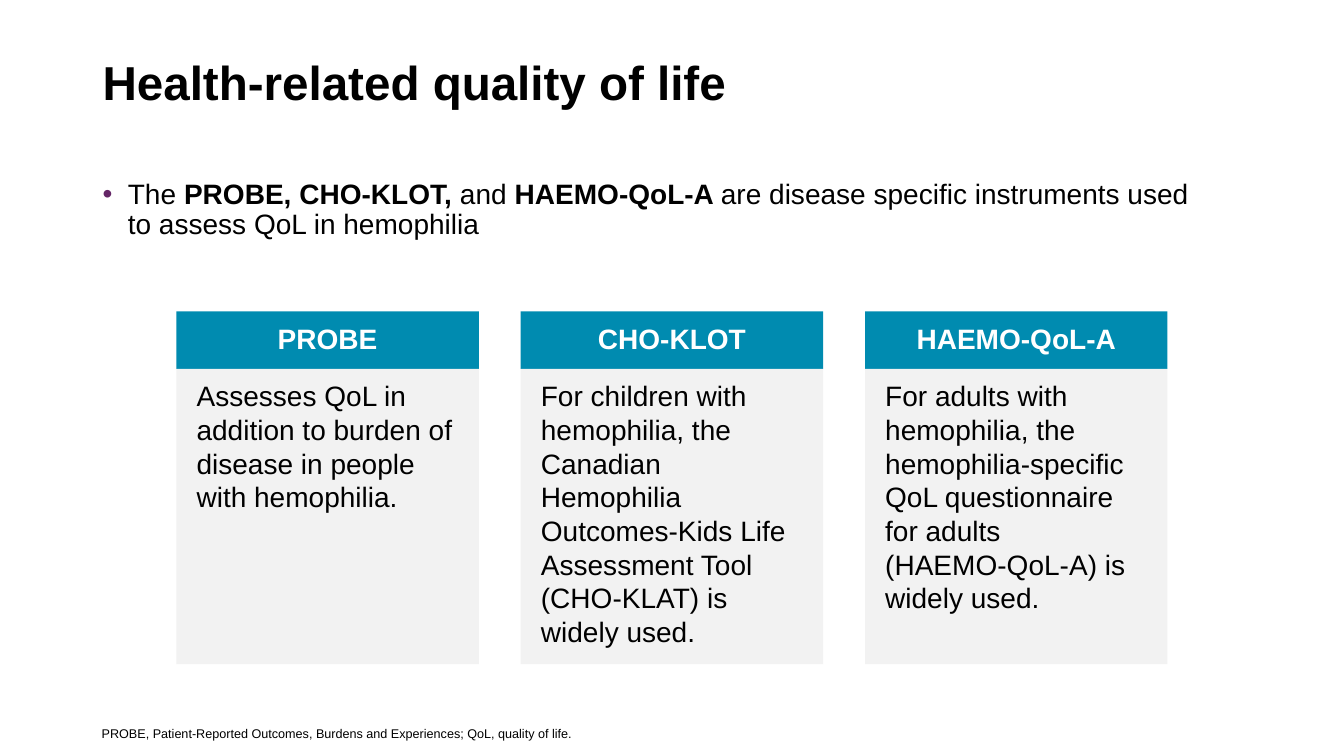
"""Build a slide on quality of life instruments in hemophilia."""
from lxml import etree
from pptx import Presentation
from pptx.dml.color import RGBColor
from pptx.enum.shapes import MSO_SHAPE as Shape
from pptx.enum.text import MSO_ANCHOR as Anchor, PP_ALIGN as Align
from pptx.oxml.ns import qn
from pptx.util import Inches, Pt

TITLE = "Health-related quality of life"
INTRO = [
    ("The ", False),
    ("PROBE, CHO-KLOT,", True),
    (" and ", False),
    ("HAEMO-QoL-A ", True),
    ("are disease specific instruments used to assess QoL in hemophilia", False),
]
CARDS = [
    ("PROBE", ["Assesses QoL in addition to burden of disease in people with hemophilia."]),
    ("CHO-KLOT", ["For children with hemophilia, the Canadian Hemophilia",
                  "Outcomes-Kids Life Assessment Tool (CHO-KLAT) is widely used."]),
    ("HAEMO-QoL-A", ["For adults with hemophilia, the hemophilia-specific QoL questionnaire for adults",
                     "(HAEMO-QoL-A) is widely used."]),
]
NOTE = "PROBE, Patient-Reported Outcomes, Burdens and Experiences; QoL, quality of life."

BLACK, WHITE, TEAL, GRAY, PLUM = "000000", "FFFFFF", "008BB0", "F2F2F2", "642566"
LEFT, TOP, WIDTH, GAP = 1.75, 3.09, 3, 0.415
HEAD, BODY = 0.57, 2.93


def color(code):
    return RGBColor.from_string(code)


def style(item, size, code=BLACK, bold=False):
    for run in item.runs:
        run.font.name = "Arial"
        run.font.size = Pt(size)
        run.font.bold = bold
        run.font.color.rgb = color(code)


def add_text(slide, box, lines, size, bold=False):
    frame = slide.shapes.add_textbox(*map(Inches, box)).text_frame
    frame.word_wrap = True
    frame.text = "\n".join(lines)
    for item in frame.paragraphs:
        style(item, size, bold=bold)
    return frame


def add_panel(slide, box, fill, lines, insets, align, code=BLACK, bold=False):
    panel = slide.shapes.add_shape(Shape.RECTANGLE, *map(Inches, box))
    panel.shadow.inherit = False
    panel.fill.solid()
    panel.fill.fore_color.rgb = color(fill)
    panel.line.fill.background()
    frame = panel.text_frame
    frame.word_wrap = True
    frame.vertical_anchor = Anchor.TOP
    (frame.margin_left, frame.margin_top,
     frame.margin_right, frame.margin_bottom) = map(Inches, insets)
    frame.text = "\n".join(lines)
    for item in frame.paragraphs:
        item.alignment = align
        style(item, 20, code, bold)
    return frame


def add_bullet(item, code):
    props = item._p.get_or_add_pPr()
    props.set("marL", str(Inches(0.25)))
    props.set("indent", str(Inches(-0.25)))
    tint = etree.SubElement(props, qn("a:buClr"))
    etree.SubElement(tint, qn("a:srgbClr"), val=code)
    etree.SubElement(props, qn("a:buFont"), typeface="Arial")
    etree.SubElement(props, qn("a:buChar"), char="•")


def main():
    deck = Presentation()
    deck.slide_width, deck.slide_height = Inches(13.33), Inches(7.5)
    slide = deck.slides.add_slide(deck.slide_layouts[6])

    title = add_text(slide, (0.92, 0.25, 11.5, 1.19), [TITLE], 34, True)
    title.vertical_anchor = Anchor.MIDDLE
    title.paragraphs[0].line_spacing = 0.9

    intro = add_text(slide, (0.92, 1.74, 11.23, 1), [], 20).paragraphs[0]
    add_bullet(intro, PLUM)
    intro.line_spacing = 0.9
    for words, bold in INTRO:
        intro.add_run().text = words
    style(intro, 20)
    for run, (words, bold) in zip(intro.runs, INTRO):
        run.font.bold = bold

    for i, (name, lines) in enumerate(CARDS):
        x = LEFT + i * (WIDTH + GAP)
        head = add_panel(slide, (x, TOP, WIDTH, HEAD), TEAL, [name],
                         (0.19, 0.11, 0.19, 0.11), Align.CENTER, WHITE, True)
        head.vertical_anchor = Anchor.MIDDLE
        head.paragraphs[0].line_spacing = 0.9
        add_panel(slide, (x, TOP + HEAD, WIDTH, BODY), GRAY, lines,
                  (0.2, 0.1, 0.14, 0.16), Align.LEFT)

    add_text(slide, (0.91, 7.15, 6.66, 0.25), [NOTE], 9)
    deck.save("out.pptx")


if __name__ == "__main__":
    main()
